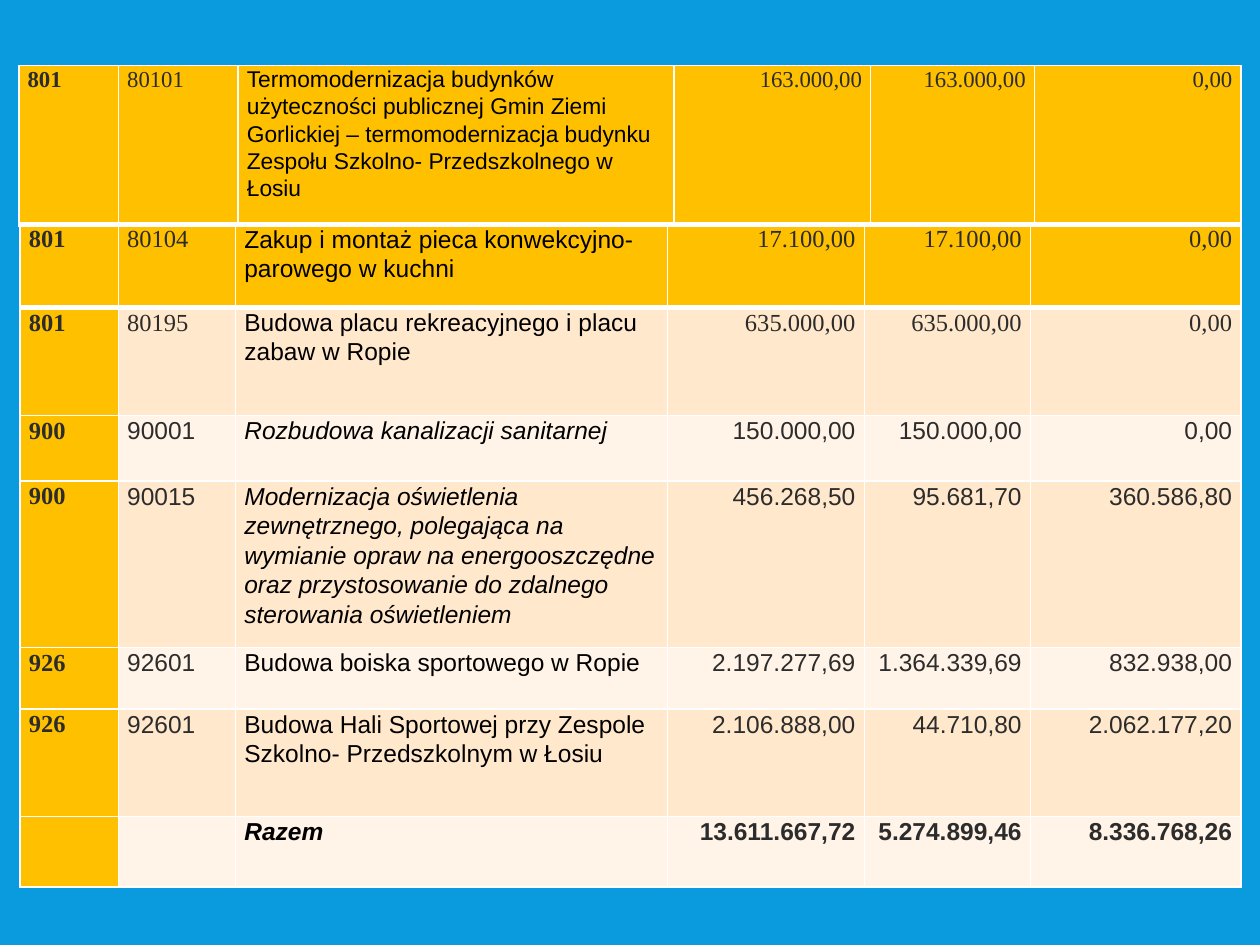
from lxml import etree
from pptx import Presentation
from pptx.dml.color import RGBColor
from pptx.enum.text import PP_ALIGN
from pptx.oxml.ns import qn
from pptx.util import Inches, Pt

LEFT, RIGHT = PP_ALIGN.LEFT, PP_ALIGN.RIGHT
SERIF, SANS = "Times New Roman", "Arial"
GOLD, PEACH, CREAM = "FFC000", "FFE8CC", "FFF4E7"
WHITE, BLACK, GREY = "FFFFFF", "000000", "2C2C2C"
color = RGBColor.from_string


def write_text(cell, text, size, font, ink, align=LEFT, bold=False, italic=False):
    paragraph = cell.text_frame.paragraphs[0]
    paragraph.alignment = align
    paragraph.line_spacing = 1.07
    paragraph.space_after = Pt(8)
    run = paragraph.add_run()
    run.text = text
    run.font.size = Pt(size)
    run.font.name = font
    run.font.bold = bold
    run.font.italic = italic
    run.font.color.rgb = color(ink)


def draw_borders(cell, top, bottom):
    properties = cell._tc.get_or_add_tcPr()
    for side, width in (("L", 1), ("R", 1), ("T", top), ("B", bottom)):
        line = etree.SubElement(properties, qn(f"a:ln{side}"), w=str(Pt(width)))
        fill = etree.SubElement(line, qn("a:solidFill"))
        etree.SubElement(fill, qn("a:srgbClr"), val=WHITE)


presentation = Presentation()
presentation.slide_width, presentation.slide_height = Inches(10), Inches(7.5)
slide = presentation.slides.add_slide(presentation.slide_layouts[6])
slide.background.fill.solid()
slide.background.fill.fore_color.rgb = color("099BDD")

# Investments: section, chapter, task, total and its two parts
main_rows = [
    ("801", "80104", "Zakup i montaż pieca konwekcyjno- parowego w kuchni",
     "17.100,00", "17.100,00", "0,00"),
    ("801", "80195", "Budowa placu rekreacyjnego i placu zabaw w Ropie",
     "635.000,00", "635.000,00", "0,00"),
    ("900", "90001", "Rozbudowa kanalizacji sanitarnej",
     "150.000,00", "150.000,00", "0,00"),
    ("900", "90015", "Modernizacja oświetlenia zewnętrznego, polegająca na wymianie "
     "opraw na energooszczędne oraz przystosowanie do zdalnego sterowania oświetleniem",
     "456.268,50", "95.681,70", "360.586,80"),
    ("926", "92601", "Budowa boiska sportowego w Ropie",
     "2.197.277,69", "1.364.339,69", "832.938,00"),
    ("926", "92601", "Budowa Hali Sportowej przy Zespole Szkolno- Przedszkolnym w Łosiu",
     "2.106.888,00", "44.710,80", "2.062.177,20"),
    ("", "", "Razem", "13.611.667,72", "5.274.899,46", "8.336.768,26"),
]
top_rows = [
    ("801", "80101", "Termomodernizacja budynków użyteczności publicznej Gmin Ziemi "
     "Gorlickiej – termomodernizacja budynku Zespołu Szkolno- Przedszkolnego w Łosiu",
     "163.000,00", "163.000,00", "0,00"),
]

# Left, top, text size, column widths, row heights, contents
tables = [
    (0.16, 1.78, 14, [0.78, 0.93, 3.43, 1.56, 1.32, 1.67],
     [0.66, 0.86, 0.52, 1.32, 0.49, 0.85, 0.56], main_rows),
    (0.15, 0.52, 13, [0.79, 0.95, 3.46, 1.56, 1.3, 1.64], [1.26], top_rows),
]

for left, top, size, widths, heights, rows in tables:
    table = slide.shapes.add_table(
        len(rows), len(widths), Inches(left), Inches(top),
        Inches(sum(widths)), Inches(sum(heights))).table
    for column, width in zip(table.columns, widths):
        column.width = Inches(width)

    for r, values in enumerate(rows):
        table.rows[r].height = Inches(heights[r])
        is_total = values[2] == "Razem"
        for c, value in enumerate(values):
            cell = table.cell(r, c)
            cell.margin_left = cell.margin_right = Inches(0.07)
            cell.margin_top = cell.margin_bottom = 0

            # The first row is a gold header with a heavy rule below it
            draw_borders(cell, top=3 if r == 1 else 1, bottom=3 if r == 0 else 1)
            cell.fill.solid()
            band = PEACH if r % 2 else CREAM
            cell.fill.fore_color.rgb = color(GOLD if r == 0 or c == 0 else band)

            # Section numbers and the 801 figures are in serif type
            if value:
                is_task = c == 2
                is_serif = c == 0 or (values[0] == "801" and not is_task)
                write_text(
                    cell, value, size,
                    font=SERIF if is_serif else SANS,
                    ink=BLACK if is_task else GREY,
                    align=RIGHT if c > 2 else LEFT,
                    bold=c == 0 or is_total,
                    italic=is_task and (values[0] == "900" or is_total))

presentation.save("out.pptx")
